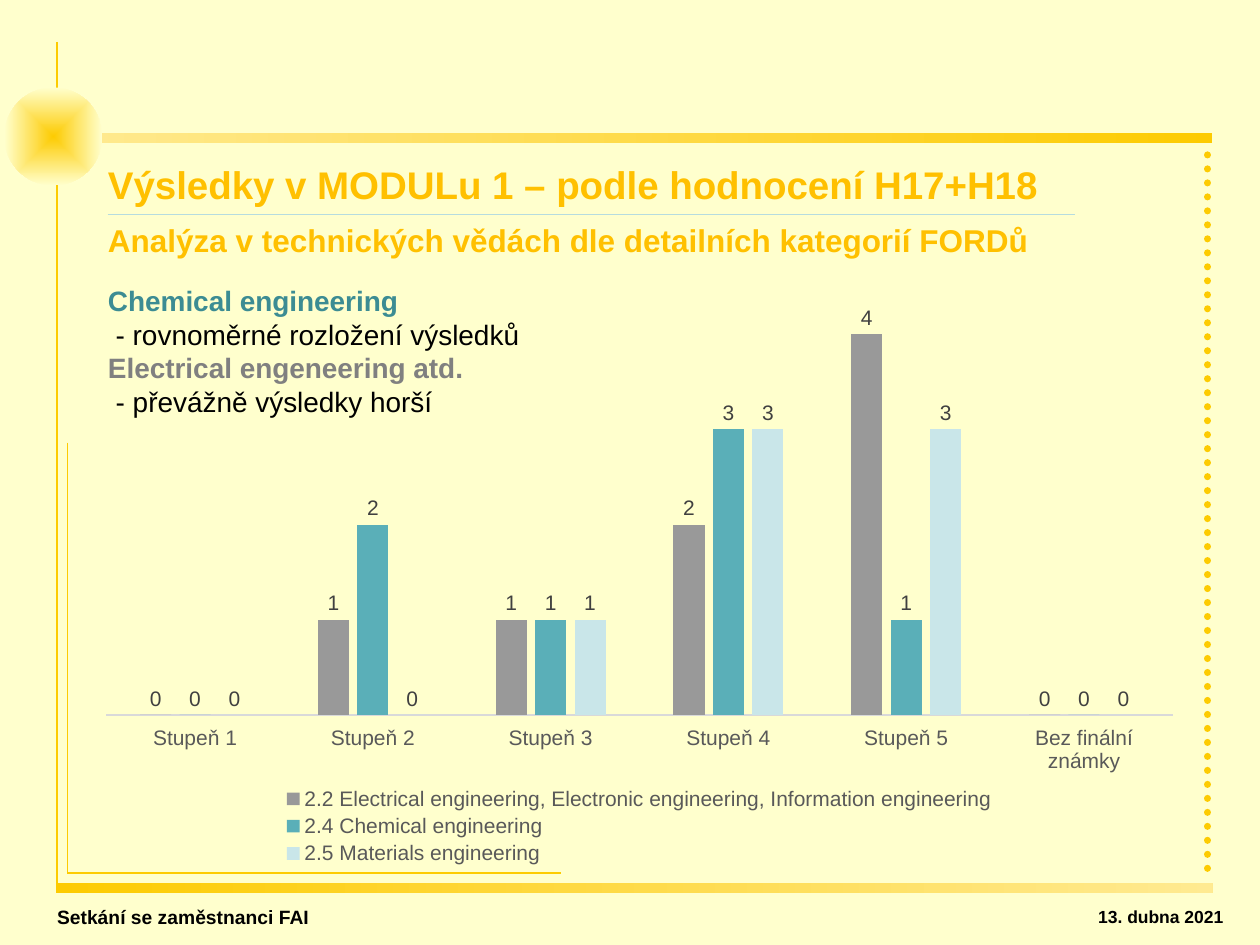
from lxml import etree
from pptx import Presentation
from pptx.chart.data import CategoryChartData
from pptx.dml.color import RGBColor
from pptx.enum.chart import XL_CHART_TYPE as ChartType, XL_LABEL_POSITION as LabelPosition
from pptx.enum.chart import XL_LEGEND_POSITION as LegendPosition, XL_TICK_LABEL_POSITION as TickLabels
from pptx.enum.chart import XL_TICK_MARK as TickMark
from pptx.enum.dml import MSO_LINE as Dash
from pptx.enum.shapes import MSO_CONNECTOR as Connector, MSO_SHAPE as Shape
from pptx.enum.text import MSO_ANCHOR as Anchor, MSO_AUTO_SIZE as AutoSize, PP_ALIGN as Align
from pptx.oxml import parse_xml
from pptx.oxml.ns import nsdecls, qn
from pptx.util import Pt

CREAM = RGBColor(0xFF, 0xFF, 0xCD)
GOLD = RGBColor(0xFD, 0xCB, 0x01)
PALE_GOLD = RGBColor(0xFF, 0xEA, 0x91)
TITLE_GOLD = RGBColor(0xFF, 0xC0, 0x00)
BLACK = RGBColor(0, 0, 0)
DARK_TEAL = RGBColor(0x3C, 0x8C, 0x93)
TEAL = RGBColor(0x5A, 0xAF, 0xB8)
PALE_TEAL = RGBColor(0xC9, 0xE6, 0xE9)
RULE_TEAL = RGBColor(0xB6, 0xDC, 0xDF)
MID_GREY = RGBColor(0x80, 0x80, 0x80)
BAR_GREY = RGBColor(0x99, 0x99, 0x99)
AXIS_GREY = RGBColor(0xD9, 0xD9, 0xD9)
TEXT_GREY = RGBColor(0x59, 0x59, 0x59)
LABEL_GREY = RGBColor(0x40, 0x40, 0x40)
FONT = "Arial"

CATEGORIES = ["Stupeň 1", "Stupeň 2", "Stupeň 3", "Stupeň 4", "Stupeň 5", "Bez finální známky"]
SERIES = [
    ("2.2 Electrical engineering, Electronic engineering, Information engineering",
     (0, 1, 1, 2, 4, 0), BAR_GREY),
    ("2.4 Chemical engineering", (0, 2, 1, 3, 1, 0), TEAL),
    ("2.5 Materials engineering", (0, 0, 1, 3, 3, 0), PALE_TEAL),
]


def style_font(font, size, color, bold=False):
    font.name = FONT
    font.size = Pt(size)
    font.bold = bold
    font.color.rgb = color


def place(shape, box):
    shape.left, shape.top, shape.width, shape.height = (Pt(value) for value in box)


def write_paragraphs(frame, lines, space_after=0):
    frame.word_wrap = True
    frame.auto_size = AutoSize.NONE
    for index, (text, size, color, bold) in enumerate(lines):
        para = frame.paragraphs[0] if index == 0 else frame.add_paragraph()
        para.alignment = Align.LEFT
        para.space_before = Pt(0)
        para.space_after = Pt(space_after)
        span = para.add_run()
        span.text = text
        style_font(span.font, size, color, bold)


def add_gradient_shape(page, kind, box, start, end):
    shape = page.shapes.add_shape(kind, *(Pt(value) for value in box))
    shape.shadow.inherit = False
    shape.line.fill.background()
    shape.fill.gradient()
    shape.fill.gradient_angle = 0
    for stop, color, position in zip(shape.fill.gradient_stops, (start, end), (0, 1)):
        stop.color.rgb = color
        stop.position = position
    return shape


def add_line(page, start, end, color, width):
    line = page.shapes.add_connector(Connector.STRAIGHT, *(Pt(value) for value in start + end))
    line.line.color.rgb = color
    line.line.width = Pt(width)
    etree.SubElement(line._element.spPr, qn("a:effectLst"))
    return line


def add_frame(page, box):
    left, top, width, height = box
    right, bottom = left + width, top + height
    add_gradient_shape(page, Shape.RECTANGLE, (left, bottom - 6, width, 6), GOLD, PALE_GOLD)
    add_gradient_shape(page, Shape.RECTANGLE, (left + 2.5, top + 52, width - 3, 6), PALE_GOLD, GOLD)
    add_line(page, (left + 0.5, top), (left + 0.5, bottom - 5), GOLD, 1.5)
    dots = add_line(page, (right - 3, top + 64.5), (right - 3, bottom - 11), GOLD, 4)
    dots.line.dash_style = Dash.ROUND_DOT
    dots.line._ln.set("cap", "rnd")
    orb = add_gradient_shape(page, Shape.FLOWCHART_SUMMING_JUNCTION,
                             (left - 29.5, top + 26, 56, 56), GOLD, CREAM)
    gradient = orb._element.spPr.find(qn("a:gradFill"))
    gradient.replace(gradient.find(qn("a:lin")), parse_xml(
        f'<a:path {nsdecls("a")} path="shape">'
        '<a:fillToRect l="50000" t="50000" r="50000" b="50000"/></a:path>'))
    corner = (left + 6.5, bottom - 11.5)
    add_line(page, (corner[0], corner[1] - 246), corner, GOLD, 0.75)
    add_line(page, corner, (corner[0] + 282, corner[1]), GOLD, 1)


def add_footer(page, box):
    left, top, width, height = box
    parts = [("Setkání se zaměstnanci FAI", 11, left, 323),
             ("13. dubna 2021", 10, left + width - 91, 91)]
    for text, size, start, extent in parts:
        note = page.shapes.add_textbox(Pt(start), Pt(top), Pt(extent), Pt(height))
        write_paragraphs(note.text_frame, [(text, size, BLACK, True)])


def fill_title(page, box):
    title = page.shapes.title
    place(title, box)
    title.text_frame.vertical_anchor = Anchor.MIDDLE
    write_paragraphs(title.text_frame, [
        ("Výsledky v MODULu 1 – podle hodnocení H17+H18", 22, TITLE_GOLD, True),
        ("Analýza v technických vědách dle detailních kategorií FORDů", 18, TITLE_GOLD, True),
    ], space_after=8)
    left, top, width, _ = box
    add_line(page, (left + 7, top + 39.5), (left + width - 58, top + 39.5), RULE_TEAL, 0.75)


def fill_comments(page, box):
    body = page.placeholders[1]
    place(body, box)
    write_paragraphs(body.text_frame, [
        ("Chemical engineering", 16, DARK_TEAL, True),
        (" - rovnoměrné rozložení výsledků", 16, BLACK, False),
        ("Electrical engeneering atd.", 16, MID_GREY, True),
        (" - převážně výsledky horší", 16, BLACK, False),
    ])
    for para in body.text_frame.paragraphs:
        properties = para._p.get_or_add_pPr()
        properties.set("marL", "0")
        properties.set("indent", "0")
        etree.SubElement(properties, qn("a:buNone"))


def set_plot_layout(chart, x, y, width, height):
    plot_area = chart._chartSpace.chart.plotArea
    for old in plot_area.findall(qn("c:layout")):
        plot_area.remove(old)
    plot_area.insert(0, parse_xml(
        f'<c:layout {nsdecls("c")}><c:manualLayout><c:layoutTarget val="inner"/>'
        '<c:xMode val="edge"/><c:yMode val="edge"/>'
        f'<c:x val="{x}"/><c:y val="{y}"/><c:w val="{width}"/><c:h val="{height}"/>'
        '</c:manualLayout></c:layout>'))


def add_grade_chart(page, box):
    data = CategoryChartData()
    data.categories = CATEGORIES
    for name, values, _ in SERIES:
        data.add_series(name, values)
    chart = page.shapes.add_chart(ChartType.COLUMN_CLUSTERED, *(Pt(value) for value in box), data).chart
    style_font(chart.font, 10, BLACK)
    chart.has_title = False
    chart.has_legend = True
    chart.legend.position = LegendPosition.BOTTOM
    chart.legend.include_in_layout = False
    style_font(chart.legend.font, 12, TEXT_GREY)

    grades = chart.category_axis
    grades.major_tick_mark = grades.minor_tick_mark = TickMark.NONE
    grades.tick_label_position = TickLabels.LOW
    grades.format.line.color.rgb = AXIS_GREY
    grades.format.line.width = Pt(0.75)
    style_font(grades.tick_labels.font, 12, TEXT_GREY)
    counts = chart.value_axis
    counts.visible = False
    counts.has_major_gridlines = False
    counts.minimum_scale, counts.maximum_scale = 0, 4.5

    plot = chart.plots[0]
    plot.gap_width, plot.overlap = 219, -27
    plot.vary_by_categories = False
    for series, (_, _, color) in zip(plot.series, SERIES):
        series.format.fill.solid()
        series.format.fill.fore_color.rgb = color
        labels = series.data_labels
        labels.show_value = True
        labels.position = LabelPosition.OUTSIDE_END
        style_font(labels.font, 12, LABEL_GREY)
    set_plot_layout(chart, 0.02, 0.02, 0.96, 0.72)


def main():
    deck = Presentation()
    deck.slide_width, deck.slide_height = Pt(720), Pt(540)
    page = deck.slides.add_slide(deck.slide_layouts[1])
    page.background.fill.solid()
    page.background.fill.fore_color.rgb = CREAM
    add_frame(page, (32, 24, 661, 486.5))
    add_footer(page, (25.5, 514, 686, 17.5))
    fill_title(page, (54.5, 83, 618, 73.5))
    add_grade_chart(page, (48, 157, 635, 340))
    fill_comments(page, (54.5, 158.5, 312, 85))
    deck.save("out.pptx")


if __name__ == "__main__":
    main()
